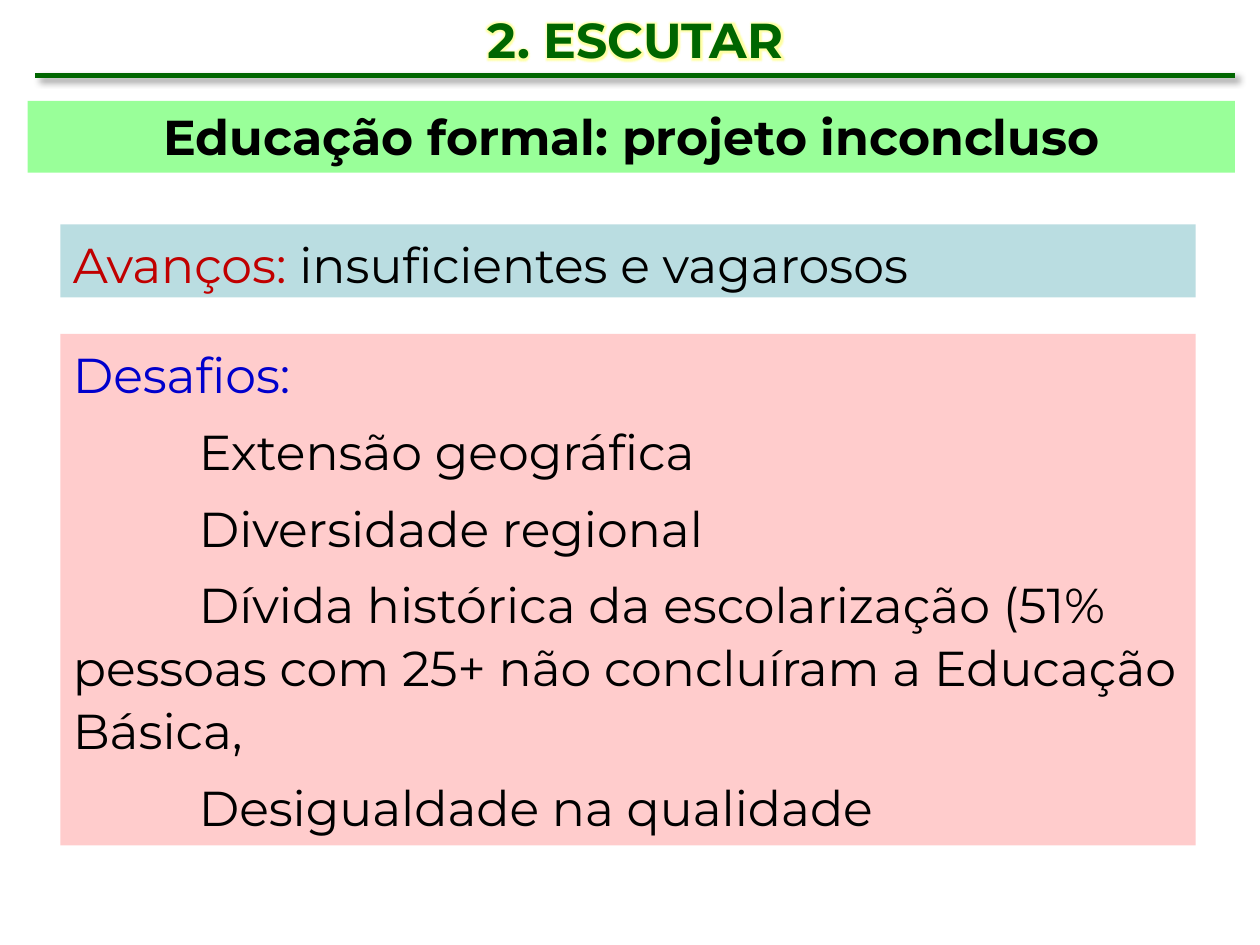
from lxml import etree
from pptx import Presentation
from pptx.dml.color import RGBColor
from pptx.enum.shapes import MSO_CONNECTOR as CONNECTOR, MSO_SHAPE as SHAPE
from pptx.enum.text import MSO_ANCHOR as ANCHOR, MSO_AUTO_SIZE as AUTO_SIZE, PP_ALIGN as ALIGN
from pptx.oxml import parse_xml
from pptx.oxml.ns import nsdecls
from pptx.util import Inches, Pt

COLORS = {
    "title": "006600", "text": "000000", "advances": "C00000", "challenges": "0000CC",
    "green": "99FF99", "blue": "BADDE1", "pink": "FFCCCC", "glow": "FFFF66", "shadow": "000000",
}


def color(name):
    return RGBColor.from_string(COLORS[name])


def add_text(para, spans, align, bold=False, spaced=False):
    """Fill a paragraph with (text, colour name) spans."""
    para.alignment = align
    if spaced:
        para.line_spacing = 1.07
        para.space_after = Pt(8)
    para.font.name = "Montserrat"
    para.font.size = Pt(28)
    para.font.bold = bold
    for text, name in spans:
        span = para.add_run()
        span.text = text
        span.font.color.rgb = color(name)


deck = Presentation()
deck.slide_width, deck.slide_height = Inches(10), Inches(7.5)
page = deck.slides.add_slide(deck.slide_layouts[6])

# Title with a soft glow
title = page.shapes.add_textbox(Inches(0.28), Inches(0.05), Inches(9.53), Inches(0.52)).text_frame
title.word_wrap = True
title.vertical_anchor = ANCHOR.MIDDLE
add_text(title.paragraphs[0], [("2. ESCUTAR", "title")], ALIGN.CENTER, bold=True)
title.paragraphs[0].runs[0].font._element.append(parse_xml(
    f'<a:effectLst {nsdecls("a")}><a:glow rad="63500"><a:srgbClr val="{COLORS["glow"]}">'
    '<a:alpha val="60000"/></a:srgbClr></a:glow></a:effectLst>'))

# Shadowed rule under the title
rule = page.shapes.add_connector(
    CONNECTOR.STRAIGHT, Inches(0.28), Inches(0.6), Inches(9.8), Inches(0.6))
rule.line.color.rgb = color("title")
rule.line.width = Pt(3)
rule._element.spPr.append(parse_xml(
    f'<a:effectLst {nsdecls("a")}><a:outerShdw blurRad="{Pt(4)}" dist="{Pt(3)}" dir="2700000" '
    f'algn="tl" rotWithShape="0"><a:srgbClr val="{COLORS["shadow"]}"><a:alpha val="40000"/>'
    '</a:srgbClr></a:outerShdw></a:effectLst>'))

# Coloured panels: left, top, width, height, fill
panels = {
    "advances": (0.48, 1.78, 9.01, 0.58, "blue"),
    "heading": (0.22, 0.8, 9.58, 0.57, "green"),
    "challenges": (0.48, 2.65, 9.01, 4.06, "pink"),
}
frames = {}
for key, (left, top, width, height, fill) in panels.items():
    box = page.shapes.add_shape(
        SHAPE.RECTANGLE, Inches(left), Inches(top), Inches(width), Inches(height))
    box.shadow.inherit = False
    box.fill.solid()
    box.fill.fore_color.rgb = color(fill)
    box.line.fill.background()
    frames[key] = box.text_frame
    frames[key].word_wrap = True
    frames[key].vertical_anchor = ANCHOR.TOP
    frames[key].auto_size = AUTO_SIZE.SHAPE_TO_FIT_TEXT

add_text(frames["heading"].paragraphs[0],
         [("Educação formal: projeto inconcluso", "text")], ALIGN.CENTER, bold=True)
add_text(frames["advances"].paragraphs[0],
         [("Avanços: ", "advances"), ("insuficientes e vagarosos", "text")],
         ALIGN.JUSTIFY, spaced=True)
add_text(frames["challenges"].paragraphs[0],
         [("Desafios:", "challenges")], ALIGN.LEFT, spaced=True)

challenges = [
    "Extensão geográfica",
    "Diversidade regional",
    "Dívida histórica da escolarização (51% pessoas com 25+ não concluíram a Educação Básica,",
    "Desigualdade na qualidade",
]
for challenge in challenges:
    para = frames["challenges"].add_paragraph()
    properties = para._p.get_or_add_pPr()
    properties.set("marL", "0")
    properties.set("indent", str(Inches(1)))
    add_text(para, [(challenge, "text")], ALIGN.LEFT, spaced=True)

deck.save("out.pptx")
